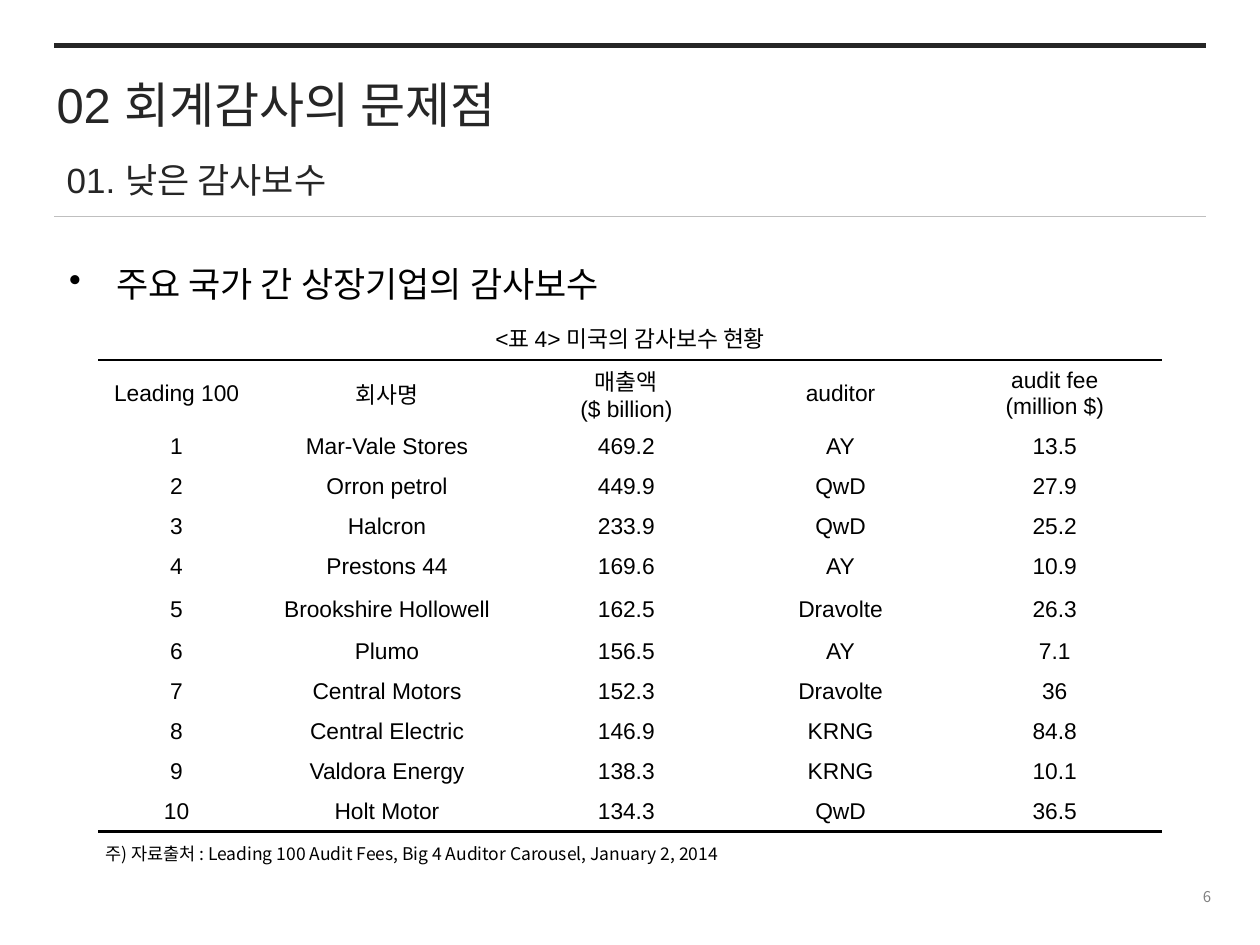
from lxml.etree import SubElement
from pptx import Presentation
from pptx.dml.color import RGBColor
from pptx.enum.shapes import MSO_CONNECTOR
from pptx.enum.text import MSO_ANCHOR, PP_ALIGN
from pptx.oxml import parse_xml
from pptx.oxml.ns import nsdecls, qn
from pptx.util import Pt

KOREAN = "Noto Sans CJK KR"
NO_STYLE_NO_GRID = "{2D5ABB26-0587-4C30-8999-92F81FD0307C}"


def style(paragraph, size, color, name, align=PP_ALIGN.LEFT):
    """Set font and alignment, with the Korean font for Hangul."""
    paragraph.alignment = align
    font = paragraph.font
    font.size = Pt(size)
    font.name = name
    font.color.rgb = RGBColor.from_string(color)
    defaults = paragraph._p.pPr.find(qn("a:defRPr"))
    SubElement(defaults, qn("a:ea")).set("typeface", KOREAN)


def set_border(cell, side, width):
    """Draw one black cell border; a width of 0 turns it off."""
    fill = '<a:solidFill><a:srgbClr val="000000"/></a:solidFill>' if width else "<a:noFill/>"
    cell._tc.get_or_add_tcPr().insert(0, parse_xml(
        f'<a:{side} {nsdecls("a")} w="{Pt(width)}">{fill}</a:{side}>'))


deck = Presentation()
deck.slide_width, deck.slide_height = Pt(720), Pt(540)
page = deck.slides.add_slide(deck.slide_layouts[6])

# Rules above and below the headings
for y, color, width in [(123.8, "BFBFBF", 0.75), (25.9, "262626", 3)]:
    rule = page.shapes.add_connector(MSO_CONNECTOR.STRAIGHT, Pt(31), Pt(y), Pt(689), Pt(y))
    rule.line.color.rgb = RGBColor.from_string(color)
    rule.line.width = Pt(width)
    SubElement(rule._element.spPr, qn("a:effectLst"))

# Headings, bullet, source note and page number
texts = [
    ("02 회계감사의 문제점", (25.2, 38.9, 544, 41), 28, "262626", "Arial"),
    ("01. 낮은 감사보수", (31, 95, 544, 23.8), 20, "262626", "Arial"),
    ("주요 국가 간 상장기업의 감사보수", (32.4, 134.6, 652, 371.5), 20, "000000", KOREAN),
    ("주) 자료출처 : Leading 100 Audit Fees, Big 4 Auditor Carousel, January 2, 2014",
     (53.3, 478, 622, 19.4), 10, "000000", KOREAN),
    ("6", (547.2, 502.6, 152, 19.4), 8.5, "808080", KOREAN),
]
boxes = []
for text, bounds, size, color, name in texts:
    box = page.shapes.add_textbox(*map(Pt, bounds))
    box.text_frame.word_wrap = True
    box.text_frame.text = text
    style(box.text_frame.paragraphs[0], size, color, name)
    boxes.append(box)

title, subtitle, bullet, note, number = boxes
subtitle.text_frame.paragraphs[0].line_spacing = Pt(16)
number.text_frame.vertical_anchor = MSO_ANCHOR.MIDDLE
number.text_frame.paragraphs[0].alignment = PP_ALIGN.RIGHT

paragraph = bullet.text_frame.paragraphs[0]
paragraph.line_spacing = 1.5
paragraph.space_before = Pt(4)
properties = paragraph._p.pPr
properties.set("marL", str(Pt(27)))
properties.set("indent", str(Pt(-27)))
properties.find(qn("a:defRPr")).addprevious(
    parse_xml(f'<a:buChar {nsdecls("a")} char="•"/>'))

# Audit fee table
rows = [
    ("<표 4> 미국의 감사보수 현황", "", "", "", ""),
    ("Leading 100", "회사명", "매출액\n($ billion)", "auditor", "audit fee\n(million $)"),
    ("1", "Mar-Vale Stores", "469.2", "AY", "13.5"),
    ("2", "Orron petrol", "449.9", "QwD", "27.9"),
    ("3", "Halcron", "233.9", "QwD", "25.2"),
    ("4", "Prestons 44", "169.6", "AY", "10.9"),
    ("5", "Brookshire Hollowell", "162.5", "Dravolte", "26.3"),
    ("6", "Plumo", "156.5", "AY", "7.1"),
    ("7", "Central Motors", "152.3", "Dravolte", "36"),
    ("8", "Central Electric", "146.9", "KRNG", "84.8"),
    ("9", "Valdora Energy", "138.3", "KRNG", "10.1"),
    ("10", "Holt Motor", "134.3", "QwD", "36.5"),
]
column_widths = [89.3, 151.2, 122.4, 122.4, 122.4]
row_heights = [25.6, 38.5] + [22.8] * 4 + [25.9] + [22.8] * 5
borders = {1: [("lnB", 0), ("lnT", 1.5)], len(rows) - 1: [("lnB", 1.7)]}

table = page.shapes.add_table(len(rows), len(column_widths), Pt(56.2), Pt(180),
                              Pt(sum(column_widths)), Pt(sum(row_heights))).table
table.first_row = table.horz_banding = False
table._tbl.tblPr.find(qn("a:tableStyleId")).text = NO_STYLE_NO_GRID
for column, width in zip(table.columns, column_widths):
    column.width = Pt(width)
for row, height in zip(table.rows, row_heights):
    row.height = Pt(height)

for r, values in enumerate(rows):
    for c, value in enumerate(values):
        cell = table.cell(r, c)
        cell.text = value
        cell.fill.background()
        cell.vertical_anchor = MSO_ANCHOR.MIDDLE
        cell.margin_top = cell.margin_bottom = Pt(1)
        for paragraph in cell.text_frame.paragraphs:
            style(paragraph, 13, "000000", "Arial", PP_ALIGN.CENTER)
        for side, width in borders.get(r, []):
            set_border(cell, side, width)
table.cell(0, 0).merge(table.cell(0, len(column_widths) - 1))

deck.save("out.pptx")
